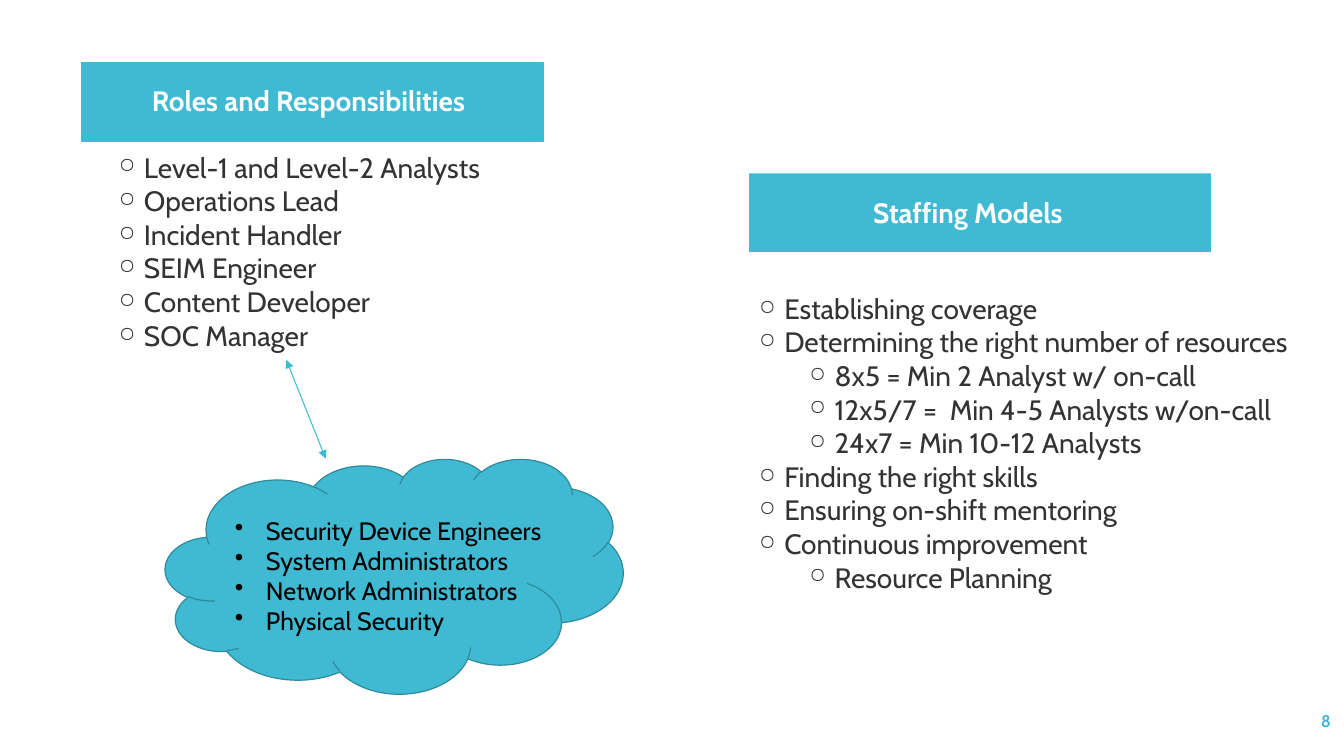
from pptx import Presentation
from pptx import util as u
from pptx.dml.color import RGBColor
from pptx.enum import shapes, text
from pptx.oxml.ns import qn
from lxml import etree

FONT = "Cabin"
TEAL, EDGE, GREY, WHITE, BLACK = "40BAD2", "2F8A9B", "333333", "FFFFFF", "000000"

BANNERS = [
    ("Roles and Responsibilities", (0.81, 0.62), (1.01, 0.78), TEAL),
    ("Staffing Models", (7.43, 1.72), (7.55, 1.89), None),
]
BANNER_SIZE, TITLE_SIZE = (4.58, 0.78), (4.1, 0.44)

ROLES = [(0, role) for role in (
    "Level-1 and Level-2 Analysts", "Operations Lead", "Incident Handler",
    "SEIM Engineer", "Content Developer", "SOC Manager")]
STAFFING = [
    (0, "Establishing coverage"),
    (0, "Determining the right number of resources"),
    (1, "8x5 = Min 2 Analyst w/ on-call"),
    (1, "12x5/7 =  Min 4-5 Analysts w/on-call"),
    (1, "24x7 = Min 10-12 Analysts"),
    (0, "Finding the right skills"),
    (0, "Ensuring on-shift mentoring"),
    (0, "Continuous improvement"),
    (1, "Resource Planning"),
]
PARTNERS = [(0, name) for name in (
    "Security Device Engineers", "System Administrators",
    "Network Administrators", "Physical Security")]

deck = Presentation()
deck.slide_width, deck.slide_height = u.Inches(13.33), u.Inches(7.5)
page = deck.slides.add_slide(deck.slide_layouts[6])


def color(value):
    return RGBColor.from_string(value)


def inches(*lengths):
    return [u.Inches(length) for length in lengths]


def add_bullet(para, mark, hang, level, scale):
    para.level = level
    props = para._p.get_or_add_pPr()
    props.set("marL", str(u.Inches(hang + 0.5 * level)))
    props.set("indent", str(-u.Inches(hang)))
    if scale:
        etree.SubElement(props, qn("a:buSzPct")).set("val", str(scale * 1000))
    etree.SubElement(props, qn("a:buChar")).set("char", mark)


def add_text(lines, at, size=20, ink=GREY, bold=False, align="LEFT",
             anchor="TOP", grow=True, mark=None, hang=0.25, scale=75):
    box = page.shapes.add_textbox(*inches(*at))
    frame = box.text_frame
    frame.word_wrap = True
    frame.vertical_anchor = text.MSO_ANCHOR[anchor]
    if grow:
        frame.auto_size = text.MSO_AUTO_SIZE.SHAPE_TO_FIT_TEXT
    for index, (level, words) in enumerate(lines):
        para = frame.add_paragraph() if index else frame.paragraphs[0]
        para.alignment = text.PP_ALIGN[align]
        if mark:
            add_bullet(para, mark, hang, level, scale)
        span = para.add_run()
        span.text = words
        span.font.name, span.font.size, span.font.bold = FONT, u.Pt(size), bold
        span.font.color.rgb = color(ink)


def add_block(kind, at, edge=None, width=1):
    block = page.shapes.add_shape(shapes.MSO_SHAPE[kind], *inches(*at))
    block.shadow.inherit = False
    block.fill.solid()
    block.fill.fore_color.rgb = color(TEAL)
    if edge:
        block.line.color.rgb = color(edge)
        block.line.width = u.Pt(width)
    else:
        block.line.fill.background()


def add_double_arrow(start, end):
    arrow = page.shapes.add_connector(
        shapes.MSO_CONNECTOR.STRAIGHT, *inches(*start, *end))
    arrow.line.color.rgb = color(TEAL)
    arrow.line.width = u.Pt(0.75)
    line = arrow.line._get_or_add_ln()
    for tip in ("a:headEnd", "a:tailEnd"):
        etree.SubElement(line, qn(tip)).set("type", "triangle")
    etree.SubElement(arrow._element.spPr, qn("a:effectLst"))


for title, corner, title_corner, edge in BANNERS:
    add_block("RECTANGLE", corner + BANNER_SIZE, edge)
    add_text([(0, title)], title_corner + TITLE_SIZE, ink=WHITE, bold=True,
             align="CENTER")

add_text(ROLES, (1.08, 1.44, 4.23, 2.12), mark="○")
add_text(STAFFING, (7.43, 2.84, 5.49, 3.13), mark="○")

add_block("CLOUD", (1.64, 4.55, 4.54, 2.33), EDGE, 0.85)
add_text(PARTNERS, (2.23, 5.06, 3.35, 1.31), size=18, ink=BLACK,
         mark="•", hang=0.31, scale=None)
add_double_arrow((2.84, 3.57), (3.23, 4.55))

add_text([(0, "8")], (11.63, 6.95, 1.67, 0.4), size=12, ink=TEAL, bold=True,
         align="RIGHT", anchor="MIDDLE", grow=False)

deck.save("out.pptx")
